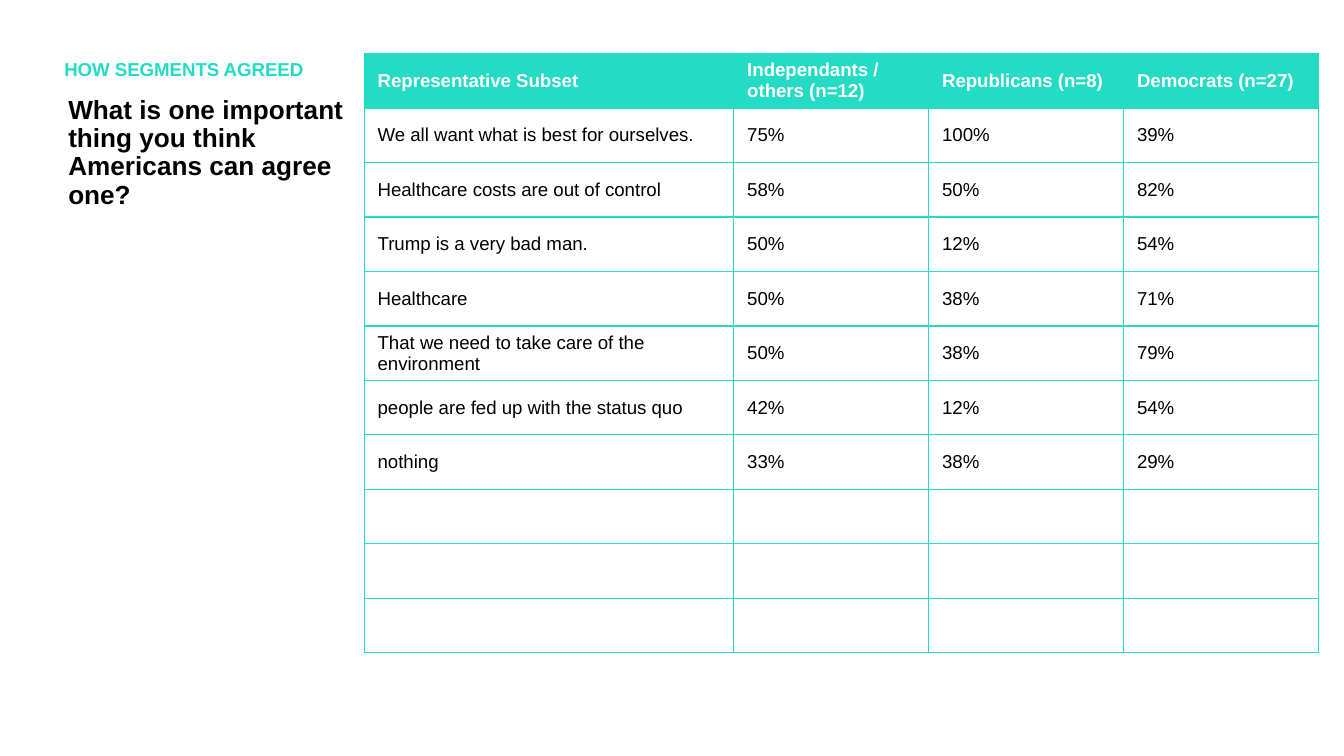
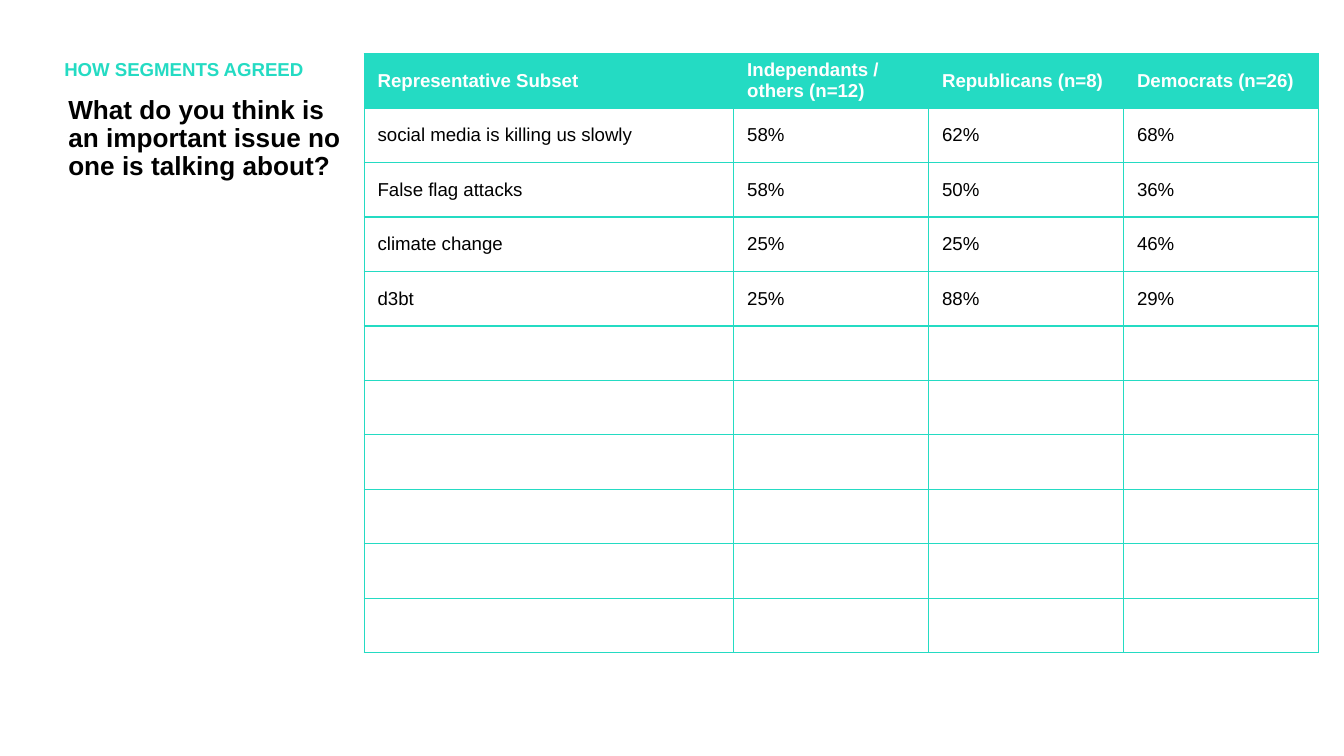
from lxml import etree
from pptx import Presentation
from pptx.dml.color import RGBColor
from pptx.enum import text
from pptx.oxml.ns import qn
from pptx.util import Inches, Pt

COLORS = {"accent": "24DBC3", "ink": "000000", "paper": "FFFFFF"}
FONT = "Arial"
SECTION = "HOW SEGMENTS AGREED"
SLIDE_WIDTH = 10
SLIDE_HEIGHT = SLIDE_WIDTH * 9 / 16
COLUMN_WIDTHS = [2.75, 1.45, 1.45, 1.45]
TABLE_HEIGHT = 4.46
ROW_COUNT = 11

QUESTIONS = [
    ("What is one important thing you think Americans can agree one?", 27, [
        ("We all want what is best for ourselves.", 75, 100, 39),
        ("Healthcare costs are out of control", 58, 50, 82),
        ("Trump is a very bad man.", 50, 12, 54),
        ("Healthcare", 50, 38, 71),
        ("That we need to take care of the environment", 50, 38, 79),
        ("people are fed up with the status quo", 42, 12, 54),
        ("nothing", 33, 38, 29),
    ]),
    ("What do you think is an important issue no one is talking about?", 26, [
        ("social media is killing us slowly", 58, 62, 68),
        ("False flag attacks", 58, 50, 36),
        ("climate change", 25, 25, 46),
        ("d3bt", 25, 88, 29),
    ]),
]


def rgb(name):
    return RGBColor.from_string(COLORS[name])


def style_text(para, size, color, bold):
    for span in para.runs:
        span.font.name = FONT
        span.font.size = Pt(size)
        span.font.bold = bold
        span.font.color.rgb = rgb(color)


def add_heading(page, words, left, top, width, height, size, color):
    box = page.shapes.add_textbox(*map(Inches, (left, top, width, height)))
    frame = box.text_frame
    frame.word_wrap = True
    frame.text = words
    para = frame.paragraphs[0]
    para.line_spacing = 0.9
    para.space_before = Pt(10)
    style_text(para, size, color, True)


def set_borders(cell, color, width):
    properties = cell._tc.get_or_add_tcPr()
    # Borders must come before the fill in the cell properties
    for index, side in enumerate(("a:lnL", "a:lnR", "a:lnT", "a:lnB")):
        line = etree.Element(qn(side), w=str(Pt(width)))
        fill = etree.SubElement(line, qn("a:solidFill"))
        etree.SubElement(fill, qn("a:srgbClr"), val=COLORS[color])
        properties.insert(index, line)


def fill_cell(cell, words, is_header):
    cell.vertical_anchor = text.MSO_ANCHOR.MIDDLE
    # Slim margins let two lines fit the row height
    cell.margin_top = cell.margin_bottom = Inches(0.03)
    cell.fill.solid()
    cell.fill.fore_color.rgb = rgb("accent" if is_header else "paper")
    set_borders(cell, "accent", 0.75)
    if words:
        cell.text_frame.text = words
        style_text(cell.text_frame.paragraphs[0], 10,
                   "paper" if is_header else "ink", is_header)


def add_agreement_table(page, democrat_count, answers):
    header = ["Representative Subset", "Independants / others (n=12)",
              "Republicans (n=8)", f"Democrats (n={democrat_count})"]
    rows = [header]
    rows += [[answer, *(f"{share}%" for share in shares)] for answer, *shares in answers]
    # Unused rows stay blank
    rows += [[""] * len(header)] * (ROW_COUNT - len(rows))

    frame = page.shapes.add_table(
        ROW_COUNT, len(header), Inches(2.71), Inches(0.4),
        Inches(sum(COLUMN_WIDTHS)), Inches(TABLE_HEIGHT))
    table = frame.table
    table.horz_banding = False
    for column, width in zip(table.columns, COLUMN_WIDTHS):
        column.width = Inches(width)
    for row_index, (row, values) in enumerate(zip(table.rows, rows)):
        row.height = Inches(TABLE_HEIGHT / ROW_COUNT)
        for cell, words in zip(row.cells, values):
            fill_cell(cell, words, row_index == 0)


def add_question_page(deck, question, democrat_count, answers):
    page = deck.slides.add_slide(deck.slide_layouts[6])
    add_heading(page, question, 0.41, 0.67, 2.3, 4.41, 14, "ink")
    add_heading(page, SECTION, 0.38, 0.4, 2.32, 0.28, 10, "accent")
    add_agreement_table(page, democrat_count, answers)


def main():
    deck = Presentation()
    deck.slide_width = Inches(SLIDE_WIDTH)
    deck.slide_height = Inches(SLIDE_HEIGHT)
    for question in QUESTIONS:
        add_question_page(deck, *question)
    deck.save("out.pptx")


if __name__ == "__main__":
    main()
